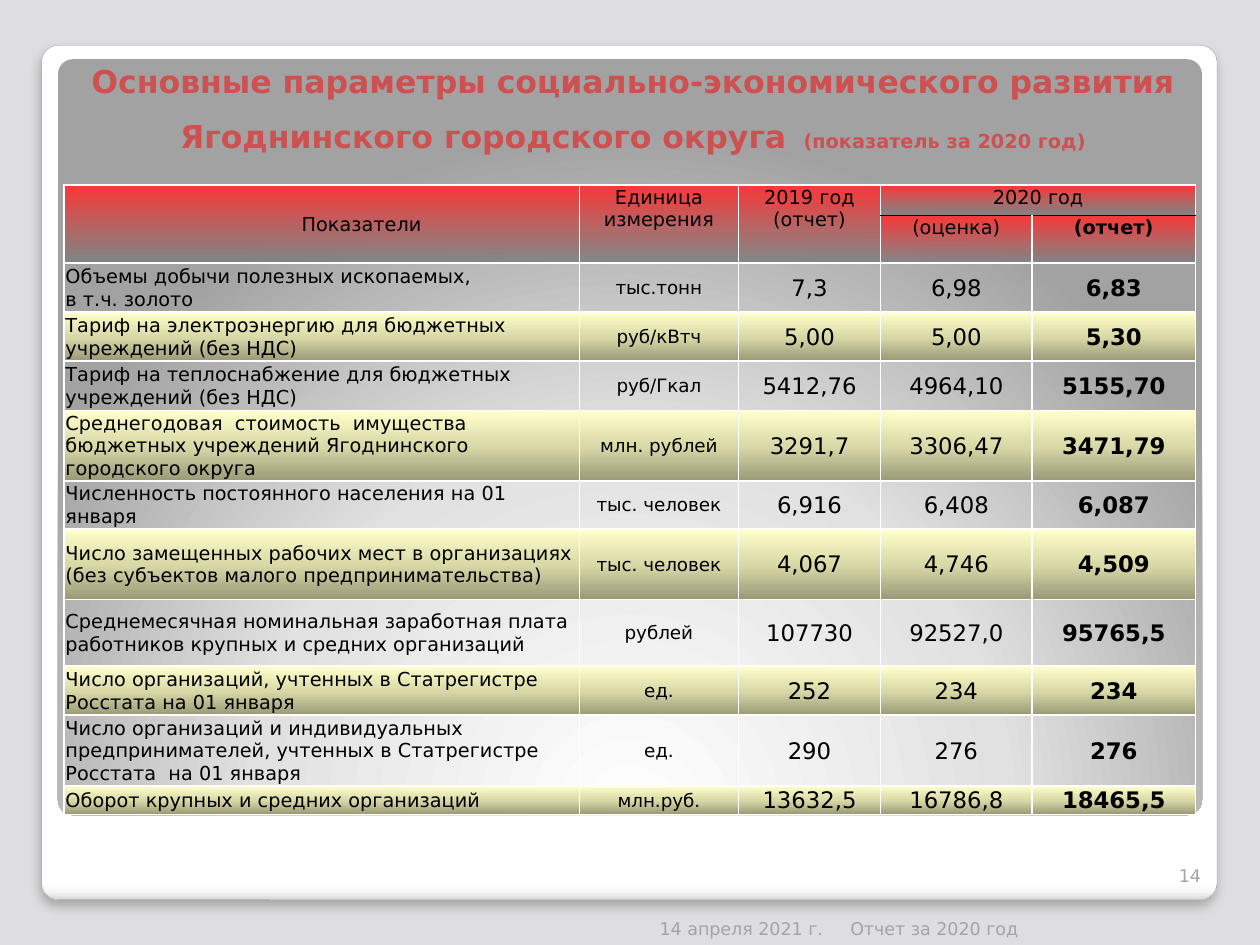
from lxml.etree import SubElement
from pptx import Presentation
from pptx.dml.color import RGBColor
from pptx.enum.shapes import MSO_SHAPE
from pptx.enum.text import MSO_ANCHOR, MSO_AUTO_SIZE, PP_ALIGN
from pptx.oxml import parse_xml
from pptx.oxml.ns import nsdecls, qn
from pptx.util import Inches, Pt

FONT = "DejaVu Sans"
COLUMNS = [4.09, 1.26, 1.13, 1.2, 1.3]
ROWS = [0.24, 0.24, 0.39, 0.39, 0.39, 0.55, 0.38, 0.56, 0.53, 0.39, 0.55, 0.15]
HEADER_STOPS = [(0, "FE3737", 100), (96, "808080", 87), (100, "808080", 100)]
BAND_STOPS = [(0, "999977", 100), (50, "DADAA9", 100), (100, "FFFFCC", 100)]
CARD_STOPS = [(0, "FFFFFF", 100), (98, "FFFFFF", 100), (99, "F7F7F7", 100), (100, "DADADA", 100)]
PANEL_STOPS = [(0, "FFFFFF", 100), (55, "E1E1E1", 100), (100, "A2A2A2", 100)]
HEADERS = [  # row, column, text, bold
    (0, 0, "Показатели", False),
    (0, 1, "Единица измерения", False),
    (0, 2, "2019 год\n(отчет)", False),
    (0, 3, "2020 год", False),
    (1, 3, "(оценка)", False),
    (1, 4, "(отчет)", True),
]
INDICATORS = [
    ("Объемы добычи полезных ископаемых,\nв т.ч. золото", "тыс.тонн", "7,3", "6,98", "6,83"),
    ("Тариф на электроэнергию для бюджетных учреждений (без НДС)", "руб/кВтч", "5,00", "5,00", "5,30"),
    ("Тариф на теплоснабжение для бюджетных учреждений (без НДС)", "руб/Гкал",
     "5412,76", "4964,10", "5155,70"),
    ("Среднегодовая  стоимость  имущества  бюджетных учреждений Ягоднинского городского округа",
     "млн. рублей", "3291,7", "3306,47", "3471,79"),
    ("Численность постоянного населения на 01 января", "тыс. человек", "6,916", "6,408", "6,087"),
    ("Число замещенных рабочих мест в организациях (без субъектов малого предпринимательства)",
     "тыс. человек", "4,067", "4,746", "4,509"),
    ("Среднемесячная номинальная заработная плата работников крупных и средних организаций",
     "рублей", "107730", "92527,0", "95765,5"),
    ("Число организаций, учтенных в Статрегистре Росстата на 01 января", "ед.", "252", "234", "234"),
    ("Число организаций и индивидуальных предпринимателей, учтенных в Статрегистре "
     "Росстата  на 01 января", "ед.", "290", "276", "276"),
    ("Оборот крупных и средних организаций", "млн.руб.", "13632,5", "16786,8", "18465,5"),
]


def color(value):
    return RGBColor.from_string(value)


def gradient(stops, angle=None):
    """Linear gradient, or a circle centred below the shape when no angle is given."""
    marks = "".join(
        f'<a:gs pos="{place * 1000}"><a:srgbClr val="{value}">'
        f'<a:alpha val="{alpha * 1000}"/></a:srgbClr></a:gs>'
        for place, value, alpha in stops)
    if angle is None:
        course = ('<a:path path="circle"><a:fillToRect l="50000" t="175000" '
                  'r="50000" b="-75000"/></a:path>')
    else:
        course = f'<a:lin ang="{angle * 60000}" scaled="0"/>'
    return parse_xml(f'<a:gradFill {nsdecls("a")} rotWithShape="1">'
                     f'<a:gsLst>{marks}</a:gsLst>{course}</a:gradFill>')


def shadow(alpha, blur, distance):
    return parse_xml(
        f'<a:effectLst {nsdecls("a")}><a:outerShdw blurRad="{Pt(blur)}" dist="{Pt(distance)}" '
        f'dir="5400000" algn="t" rotWithShape="0"><a:srgbClr val="000000">'
        f'<a:alpha val="{alpha * 1000}"/></a:srgbClr></a:outerShdw></a:effectLst>')


def format_para(para, size, value, align=PP_ALIGN.LEFT, bold=False):
    para.alignment = align
    for span in para.runs:
        span.font.size = Pt(size)
        span.font.name = FONT
        span.font.bold = bold
        span.font.color.rgb = color(value)


def add_round_panel(page, place, fill, line=None):
    panel = page.shapes.add_shape(MSO_SHAPE.ROUNDED_RECTANGLE, *map(Inches, place))
    panel.adjustments[0] = 0.02
    panel.element.spPr.find(qn("a:prstGeom")).addnext(fill)
    panel.shadow.inherit = False
    if line:
        panel.line.color.rgb = color(line)
        panel.line.width = Pt(0.16)
    else:
        panel.line.fill.background()
    page.shapes.title.element.addprevious(panel.element)
    return panel


def format_title(title):
    title.left, title.top, title.width, title.height = map(Inches, (0.51, 0.52, 9.03, 0.79))
    frame = title.text_frame
    frame.word_wrap = True
    frame.auto_size = MSO_AUTO_SIZE.NONE
    frame.vertical_anchor = MSO_ANCHOR.BOTTOM
    para = frame.paragraphs[0]
    parts = [("Основные параметры социально-экономического развития Ягоднинского городского округа", 18),
             (" ", 28), ("(показатель за 2020 год)", 11)]
    for text, _ in parts:
        para.add_run().text = text
    format_para(para, 18, "CE5050", PP_ALIGN.CENTER, True)
    for span, (_, size) in zip(para.runs, parts):
        span.font.size = Pt(size)
    for fill in list(title.element.iter(qn("a:solidFill"))):
        fill.addnext(shadow(50, 4, 3))


def add_footer_text(page, place, text, align):
    box = page.shapes.add_textbox(*map(Inches, place))
    frame = box.text_frame
    frame.word_wrap = True
    frame.vertical_anchor = MSO_ANCHOR.BOTTOM
    frame.text = text
    format_para(frame.paragraphs[0], 10, "A4A4A6", align)


def set_borders(cell, top="FFFFFF", bottom="FFFFFF"):
    properties = cell._tc.get_or_add_tcPr()
    for side, value in (("L", "FFFFFF"), ("R", "FFFFFF"), ("T", top), ("B", bottom)):
        line = SubElement(properties, qn(f"a:ln{side}"), w=str(Pt(1)))
        SubElement(SubElement(line, qn("a:solidFill")), qn("a:srgbClr"), val=value)


def fill_cell(cell, text, size, align, bold, anchor=MSO_ANCHOR.MIDDLE):
    cell.text = text
    cell.vertical_anchor = anchor
    for para in cell.text_frame.paragraphs:
        format_para(para, size, "000000", align, bold)


def add_indicator_table(page):
    frame = page.shapes.add_table(len(ROWS), len(COLUMNS), Inches(0.51), Inches(1.47),
                                  Inches(sum(COLUMNS)), Inches(sum(ROWS)))
    table = frame.table
    for column, width in zip(table.columns, COLUMNS):
        column.width = Inches(width)
    for row, height in zip(table.rows, ROWS):
        row.height = Inches(height)

    for r in range(len(ROWS)):
        for c in range(len(COLUMNS)):
            cell = table.cell(r, c)
            cell.margin_left = cell.margin_right = cell.margin_top = Inches(0.01)
            cell.margin_bottom = 0
            set_borders(cell, top="000000" if r == 1 and c > 2 else "FFFFFF",
                        bottom="000000" if r == 0 and c > 2 else "FFFFFF")
            if r < 2:
                cell._tc.tcPr.append(gradient(HEADER_STOPS, 90))
            elif r % 2:
                cell._tc.tcPr.append(gradient(BAND_STOPS, 270))
            else:
                cell.fill.background()

    for c in range(3):
        table.cell(0, c).merge(table.cell(1, c))
    table.cell(0, 3).merge(table.cell(0, 4))
    for r, c, text, bold in HEADERS:
        anchor = MSO_ANCHOR.TOP if c else MSO_ANCHOR.MIDDLE
        fill_cell(table.cell(r, c), text, 11, PP_ALIGN.CENTER, bold, anchor)
    table.cell(0, 0).margin_left = Inches(0.64)

    sizes = [11, 10.5, 13, 13, 13]
    for r, indicator in enumerate(INDICATORS, start=2):
        for c, (text, size) in enumerate(zip(indicator, sizes)):
            align = PP_ALIGN.CENTER if c else PP_ALIGN.LEFT
            fill_cell(table.cell(r, c), text, size, align, c == 4)


def main():
    deck = Presentation()
    deck.slide_width, deck.slide_height = Inches(10), Inches(7.5)
    page = deck.slides.add_slide(deck.slide_layouts[5])
    page.background.fill.solid()
    page.background.fill.fore_color.rgb = color("DEDEE0")

    card = add_round_panel(page, (0.33, 0.36, 9.33, 6.78), gradient(CARD_STOPS, 90), "A4A4A4")
    card.element.spPr.replace(card.element.spPr.find(qn("a:effectLst")), shadow(25, 6, 4))
    add_round_panel(page, (0.46, 0.47, 9.08, 6), gradient(PANEL_STOPS))
    format_title(page.shapes.title)
    add_footer_text(page, (9.13, 6.68, 0.5, 0.4), "14", PP_ALIGN.RIGHT)
    add_footer_text(page, (4.13, 7.1, 2.5, 0.4), "14 апреля 2021 г.", PP_ALIGN.RIGHT)
    add_footer_text(page, (6.65, 7.1, 2.5, 0.4), "Отчет за 2020 год", PP_ALIGN.LEFT)
    add_indicator_table(page)
    deck.save("out.pptx")


if __name__ == "__main__":
    main()
